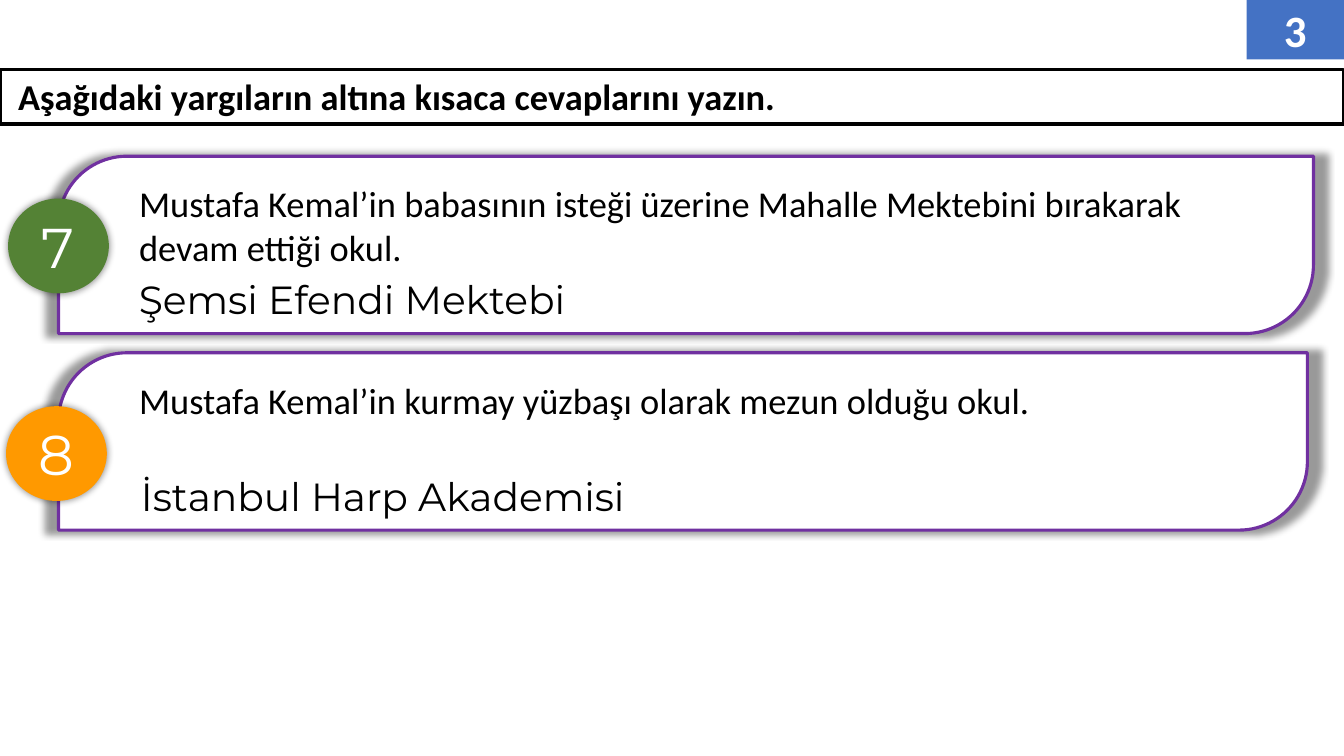
from lxml.etree import SubElement
from pptx import Presentation
from pptx.dml.color import RGBColor
from pptx.enum.shapes import MSO_SHAPE
from pptx.enum.text import MSO_ANCHOR, MSO_AUTO_SIZE, PP_ALIGN
from pptx.oxml.ns import qn
from pptx.util import Inches, Pt

COLORS = {
    "ink": "000000", "paper": "FFFFFF", "page": "4472C4",
    "border": "7030A0", "green": "548235", "orange": "FF9900",
}
COLUMNS, ROWS = 40, 30
QUESTIONS = [
    {"number": "7", "color": "green", "card": (1.74, 6.2, 37.35, 7.04),
     "badge": (0.24, 7.88, 3, 3.76), "answer_box": (3.84, 10.72, 14.52, 2.28),
     "question": "Mustafa Kemal’in babasının isteği üzerine Mahalle Mektebini bırakarak devam ettiği okul.",
     "answer": "Şemsi Efendi Mektebi"},
    {"number": "8", "color": "orange", "card": (1.74, 14, 37.17, 7.04),
     "badge": (0.18, 16.12, 3, 3.76), "answer_box": (3.9, 18.56, 16.47, 2.28),
     "question": "Mustafa Kemal’in kurmay yüzbaşı olarak mezun olduğu okul.",
     "answer": "İstanbul Harp Akademisi"},
]


class QuizSlide:
    """Draws the parts of a quiz slide on a grid of columns and rows."""

    def __init__(self, deck):
        self.column = deck.slide_width / COLUMNS
        self.row = deck.slide_height / ROWS
        self.slide = deck.slides.add_slide(deck.slide_layouts[6])

    def place(self, left, top, width, height):
        return [round(n) for n in (left * self.column, top * self.row,
                                   width * self.column, height * self.row)]

    def apply(self, target, values):
        for attribute, value in values.items():
            setattr(target, attribute, value)

    def add_words(self, shape, words, size, font="Calibri", color="ink", bold=False,
                  align=PP_ALIGN.LEFT, **frame_values):
        frame = shape.text_frame
        self.apply(frame, {"word_wrap": True, "vertical_anchor": MSO_ANCHOR.TOP, **frame_values})
        paragraph = frame.paragraphs[0]
        paragraph.alignment = align
        run = paragraph.add_run()
        run.text = words
        self.apply(run.font, {"name": font, "size": Pt(size), "bold": bold})
        run.font.color.rgb = RGBColor.from_string(COLORS[color])

    def block(self, preset, box, fill=None, line=None, glow=False):
        shape = self.slide.shapes.add_shape(preset, *self.place(*box))
        shape.shadow.inherit = False
        for paint, color in ((shape.fill, fill), (shape.line.fill, line)):
            if color:
                paint.solid()
                paint.fore_color.rgb = RGBColor.from_string(COLORS[color])
            else:
                paint.background()
        if line:
            shape.line.width = Pt(2.25)
        if glow:
            self.glow(shape)
        return shape

    def glow(self, shape):
        effects = shape._element.spPr.find(qn("a:effectLst"))
        outer = SubElement(effects, qn("a:outerShdw"), blurRad=str(Pt(5)),
                           sx="102000", sy="102000", algn="ctr", rotWithShape="0")
        shade = SubElement(outer, qn("a:srgbClr"), val=COLORS["ink"])
        SubElement(shade, qn("a:alpha"), val="40000")

    def heading(self, words, box):
        banner = self.block(MSO_SHAPE.RECTANGLE, box, line="ink")
        self.add_words(banner, words, 26, bold=True, margin_left=Inches(0.18),
                       auto_size=MSO_AUTO_SIZE.SHAPE_TO_FIT_TEXT)

    def label(self, preset, words, box, fill, size, glow=False, **style):
        marker = self.block(preset, box, fill=fill, glow=glow)
        self.add_words(marker, words, size, color="paper", align=PP_ALIGN.CENTER,
                       vertical_anchor=MSO_ANCHOR.MIDDLE, **style)

    def card(self, words, box):
        panel = self.block(MSO_SHAPE.ROUND_2_DIAG_RECTANGLE, box, "paper", "border", glow=True)
        panel.adjustments[0] = 0.386
        panel.adjustments[1] = 0
        self.add_words(panel, words, 26, margin_left=Inches(0.6))

    def answer(self, words, box):
        reply = self.slide.shapes.add_textbox(*self.place(*box))
        self.add_words(reply, words, 28, font="Montserrat", word_wrap=False,
                       auto_size=MSO_AUTO_SIZE.SHAPE_TO_FIT_TEXT)


def main():
    deck = Presentation()
    deck.slide_width, deck.slide_height = Inches(13.33), Inches(7.5)
    quiz = QuizSlide(deck)
    quiz.heading("Aşağıdaki yargıların altına kısaca cevaplarını yazın.", (0, 2.76, 40, 2.16))
    quiz.label(MSO_SHAPE.RECTANGLE, "3", (37.1, 0, 2.9, 2.36), "page", 32, bold=True)
    for item in QUESTIONS:
        quiz.card(item["question"], item["card"])
    for item in QUESTIONS:
        quiz.label(MSO_SHAPE.OVAL, item["number"], item["badge"], item["color"], 40,
                   glow=True, font="Montserrat")
    for item in QUESTIONS:
        quiz.answer(item["answer"], item["answer_box"])
    deck.save("out.pptx")


if __name__ == "__main__":
    main()
